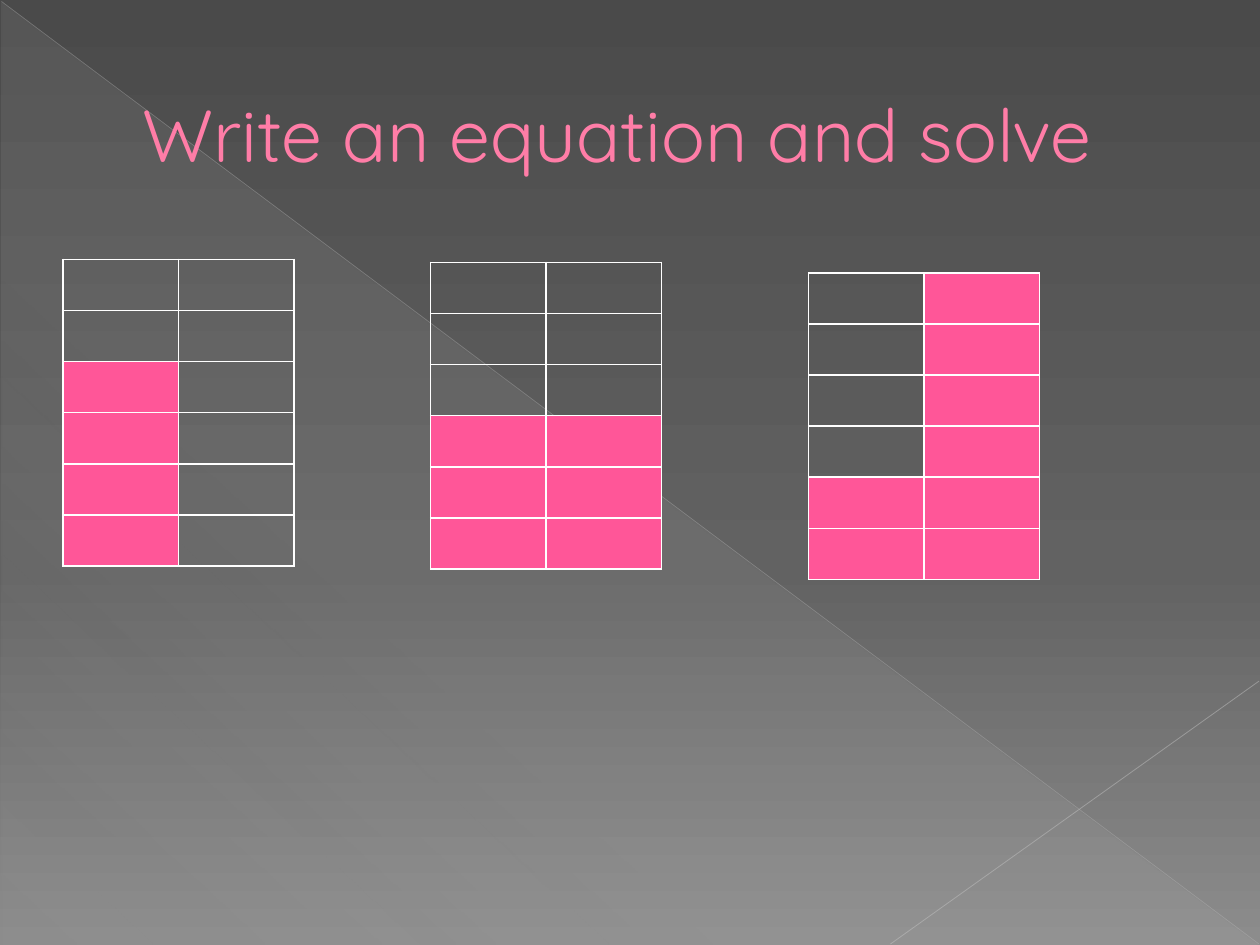
from itertools import product

from lxml.etree import SubElement
from pptx import Presentation
from pptx.dml.color import RGBColor
from pptx.enum.shapes import MSO_CONNECTOR as Connector, MSO_SHAPE as Shape
from pptx.enum.text import MSO_ANCHOR as Anchor, PP_ALIGN as Align
from pptx.oxml.ns import qn
from pptx.util import Cm, Pt

WHITE = RGBColor(0xFF, 0xFF, 0xFF)
PINK = RGBColor(0xFF, 0x56, 0x98)
TITLE_PINK = RGBColor(0xFF, 0x7D, 0xA7)
TITLE_EDGE = RGBColor(0xB1, 0x27, 0x61)
DARK_GREY = RGBColor(0x4A, 0x4A, 0x4A)
MID_GREY = RGBColor(0x62, 0x62, 0x62)
LIGHT_GREY = RGBColor(0x8C, 0x8C, 0x8C)
SHEEN = RGBColor(0xD2, 0xD2, 0xD2)
LONG_LINE = RGBColor(0xBF, 0xBF, 0xBF)
SHORT_LINE = RGBColor(0xC6, 0xC6, 0xC6)

FONT = "Quicksand"
WIDTH, HEIGHT = Cm(25.4), Cm(19.05)
ROWS, COLUMNS = 6, 2
COLUMN_WIDTH, ROW_HEIGHT = Cm(2.33), Cm(1.03)


def add_color(parent, color, opacity=100):
    element = SubElement(parent, qn("a:srgbClr"), val=str(color))
    if opacity < 100:
        SubElement(element, qn("a:alpha"), val=str(opacity * 1000))


def add_solid_line(parent, tag, color, width):
    line = SubElement(parent, qn(tag), w=str(Pt(width)))
    add_color(SubElement(line, qn("a:solidFill")), color)


def paint_gradient(fill, owner, clockwise_angle, stops):
    fill.gradient()
    fill.gradient_angle = 360 - clockwise_angle
    stop_list = owner.find(".//" + qn("a:gsLst"))
    for stop in list(stop_list):
        stop_list.remove(stop)
    for position, color, opacity in stops:
        stop = SubElement(stop_list, qn("a:gs"), pos=str(position * 1000))
        add_color(stop, color, opacity)


def add_thin_line(slide, start, end, color, width, opacity):
    connector = slide.shapes.add_connector(Connector.STRAIGHT, *start, *end)
    connector.line.width = Pt(width)
    connector.line.color.rgb = color
    color_element = connector._element.find(".//" + qn("a:srgbClr"))
    SubElement(color_element, qn("a:alpha"), val=str(opacity * 1000))
    SubElement(connector._element.spPr, qn("a:effectLst"))


def add_backdrop(slide, left, top, width, height):
    paint_gradient(slide.background.fill, slide._element, 90,
                   [(0, DARK_GREY, 100), (60, MID_GREY, 100), (100, LIGHT_GREY, 100)])
    triangle = slide.shapes.add_shape(Shape.RIGHT_TRIANGLE, left, top, width, height)
    triangle.shadow.inherit = False
    triangle.line.fill.background()
    paint_gradient(triangle.fill, triangle._element, 133,
                   [(0, SHEEN, 10), (70, SHEEN, 8), (100, SHEEN, 1)])
    right, bottom = left + width, top + height
    add_thin_line(slide, (left, top), (right, bottom), LONG_LINE, 0.39, 35)
    add_thin_line(slide, (right, top + Cm(13.7)), (right - Cm(7.43), bottom),
                  SHORT_LINE, 0.47, 45)


def add_title(slide, left, top, width, height):
    title = slide.shapes.title
    slide.shapes._spTree.append(title._element)
    title.left, title.top, title.width, title.height = left, top, width, height
    text_frame = title.text_frame
    text_frame.text = "Write an equation and solve"
    text_frame.vertical_anchor = Anchor.MIDDLE
    paragraph = text_frame.paragraphs[0]
    paragraph.alignment = Align.LEFT
    paragraph._p.get_or_add_pPr().set("marL", str(Cm(1.35)))
    run = paragraph.runs[0]
    add_solid_line(run._r.get_or_add_rPr(), "a:ln", TITLE_EDGE, 0.5)
    run.font.name = FONT
    run.font.size = Pt(42)
    run.font.color.rgb = TITLE_PINK


def add_fraction_grid(slide, left, top, shaded_per_column):
    table = slide.shapes.add_table(ROWS, COLUMNS, left, top, COLUMNS * COLUMN_WIDTH,
                                   ROWS * ROW_HEIGHT).table
    table.first_row = table.horz_banding = False
    for column in table.columns:
        column.width = COLUMN_WIDTH
    for row in table.rows:
        row.height = ROW_HEIGHT
    for row, column in product(range(ROWS), range(COLUMNS)):
        cell = table.cell(row, column)
        cell.margin_top = cell.margin_bottom = 0
        for side in ("a:lnL", "a:lnR", "a:lnT", "a:lnB"):
            add_solid_line(cell._tc.get_or_add_tcPr(), side, WHITE, 1)
        if row >= ROWS - shaded_per_column[column]:
            cell.fill.solid()
            cell.fill.fore_color.rgb = PINK
        else:
            cell.fill.background()


def main():
    presentation = Presentation()
    presentation.slide_width, presentation.slide_height = WIDTH, HEIGHT
    slide = presentation.slides.add_slide(presentation.slide_layouts[5])
    add_backdrop(slide, Cm(0.03), Cm(0.03), WIDTH - Cm(0.05), HEIGHT - Cm(0.05))
    add_title(slide, Cm(1.27), Cm(0.74), Cm(22.86), Cm(3.89))
    grids = [
        (1.27, 5.23, (4, 0)),
        (8.68, 5.29, (3, 3)),
        (16.3, 5.5, (2, 6)),
    ]
    for left, top, shaded_per_column in grids:
        add_fraction_grid(slide, Cm(left), Cm(top), shaded_per_column)
    presentation.save("out.pptx")


if __name__ == "__main__":
    main()
